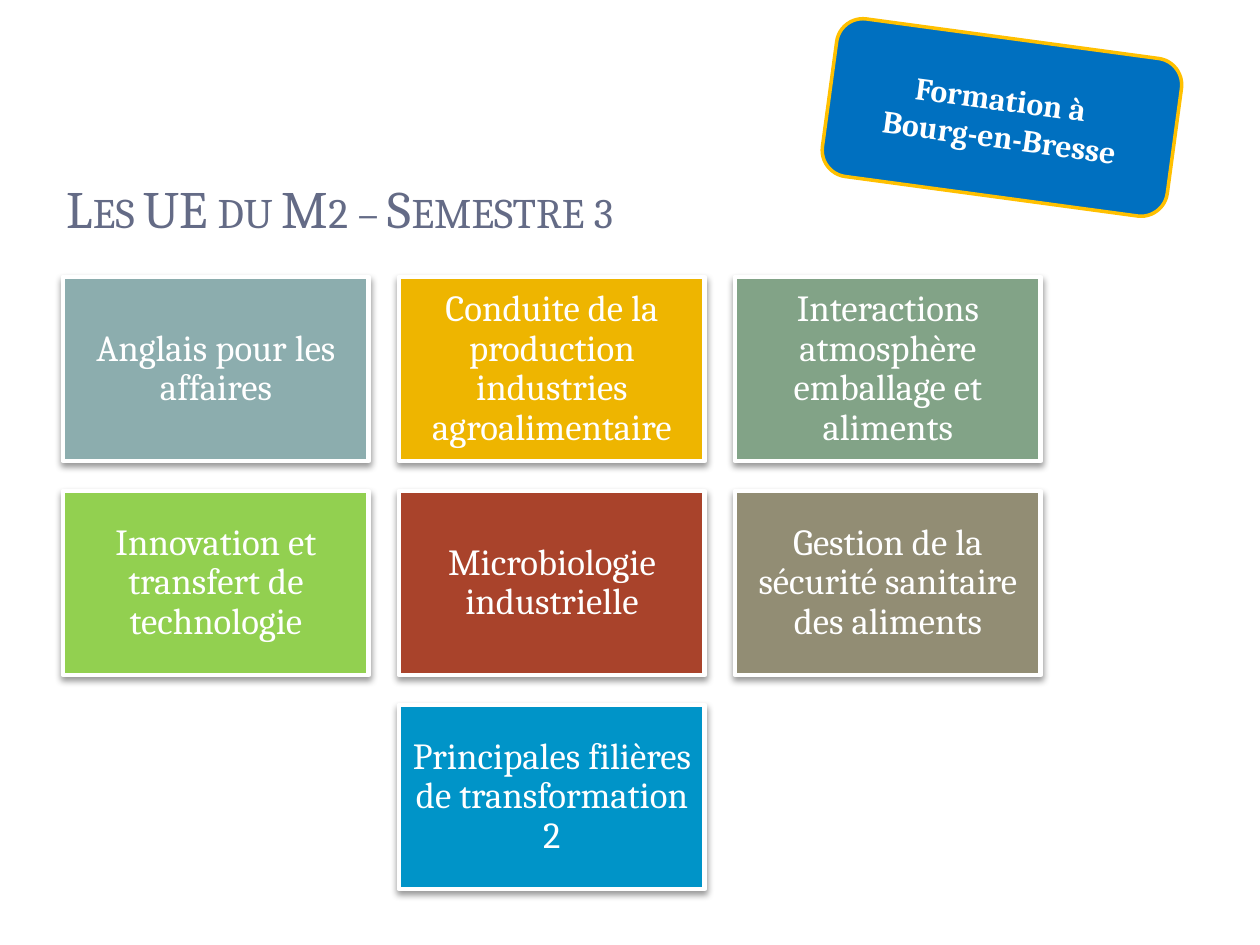
from lxml import etree
from pptx import Presentation
from pptx.dml.color import RGBColor
from pptx.enum.shapes import MSO_SHAPE
from pptx.enum.text import MSO_ANCHOR, PP_ALIGN
from pptx.oxml import parse_xml
from pptx.oxml.ns import nsdecls
from pptx.util import Pt

PX = 7257  # EMU per px, at 126 px to the inch
FONT = "Cambria"
RECTANGLE, ROUNDED = MSO_SHAPE.RECTANGLE, MSO_SHAPE.ROUNDED_RECTANGLE
CENTER, LEFT = PP_ALIGN.CENTER, PP_ALIGN.LEFT
MIDDLE, BOTTOM = MSO_ANCHOR.MIDDLE, MSO_ANCHOR.BOTTOM

WHITE = RGBColor(0xFF, 0xFF, 0xFF)
SLATE = RGBColor(0x64, 0x6B, 0x86)
TEAL = RGBColor(0x8C, 0xAD, 0xAE)
YELLOW = RGBColor(0xEE, 0xB5, 0x00)
SAGE = RGBColor(0x82, 0xA3, 0x87)
GREEN = RGBColor(0x92, 0xD0, 0x50)
BRICK = RGBColor(0xA9, 0x43, 0x2B)
TAUPE = RGBColor(0x92, 0x8D, 0x74)
SKY = RGBColor(0x00, 0x94, 0xC8)
BLUE = RGBColor(0x00, 0x70, 0xC0)
GOLD = RGBColor(0xFF, 0xC0, 0x00)

TITLE = "Les UE du M2 – Semestre 3"
CAMPUS = ["Formation à ", "Bourg-en-Bresse"]
COURSES = [
    ("Anglais pour les affaires", TEAL),
    ("Conduite de la production industries agroalimentaire", YELLOW),
    ("Interactions atmosphère emballage et aliments", SAGE),
    ("Innovation et transfert de technologie", GREEN),
    ("Microbiologie industrielle", BRICK),
    ("Gestion de la sécurité sanitaire des aliments", TAUPE),
    ("Principales filières de transformation 2", SKY),
]

COLUMNS = 3
GRID_LEFT, GRID_TOP = 63, 277
CARD_W, CARD_H = 306, 184
GAP_X, GAP_Y = 30, 30
CARD_INSET = 11


def px(*lengths):
    return [length * PX for length in lengths]


def write(frame, lines, size, color, align, anchor, bold=False):
    frame.word_wrap = True
    frame.vertical_anchor = anchor
    for i, line in enumerate(lines):
        paragraph = frame.paragraphs[0] if i == 0 else frame.add_paragraph()
        paragraph.alignment = align
        run = paragraph.add_run()
        run.text = line
        run.font.name = FONT
        run.font.size = Pt(size)
        run.font.bold = bold
        run.font.color.rgb = color


def add_panel(slide, kind, box, fill, line, line_width):
    panel = slide.shapes.add_shape(kind, *px(*box))
    panel.shadow.inherit = False
    panel.fill.solid()
    panel.fill.fore_color.rgb = fill
    panel.line.color.rgb = line
    panel.line.width = Pt(line_width)
    return panel


def add_drop_shadow(shape):
    effects = shape.element.spPr.find("{*}effectLst")
    etree.SubElement(effects, "placeholder")
    effects[0] = parse_xml(
        f'<a:outerShdw {nsdecls("a")} blurRad="50800" dist="25400" dir="5400000" rotWithShape="0">'
        '<a:srgbClr val="000000"><a:alpha val="40000"/></a:srgbClr></a:outerShdw>')


def add_title(slide):
    title = slide.shapes.title
    title.left, title.top, title.width, title.height = px(54, 87, 1029, 158)
    write(title.text_frame, [TITLE], 30, SLATE, LEFT, BOTTOM)
    title.text_frame.paragraphs[0].runs[0].font.element_cap = None
    run_properties = title.text_frame.paragraphs[0].runs[0].font._element
    run_properties.set("cap", "small")


def add_courses(slide):
    for i, (course, color) in enumerate(COURSES):
        row, column = divmod(i, COLUMNS)
        row_length = min(COLUMNS, len(COURSES) - row * COLUMNS)
        column += (COLUMNS - row_length) // 2  # a short last row is centred
        box = (GRID_LEFT + column * (CARD_W + GAP_X),
               GRID_TOP + row * (CARD_H + GAP_Y), CARD_W, CARD_H)
        card = add_panel(slide, RECTANGLE, box, color, WHITE, 2.75)
        add_drop_shadow(card)
        frame = card.text_frame
        frame.margin_left, frame.margin_top, frame.margin_right, frame.margin_bottom = px(
            *[CARD_INSET] * 4)
        write(frame, [course], 21, WHITE, CENTER, MIDDLE)
        frame.paragraphs[0].line_spacing = 0.9


def add_campus_badge(slide):
    badge = add_panel(slide, ROUNDED, (828, 38, 348, 159), BLUE, GOLD, 2)
    badge.rotation = 7.7
    write(badge.text_frame, CAMPUS, 18, WHITE, CENTER, MIDDLE, bold=True)


def main():
    deck = Presentation()
    deck.slide_width, deck.slide_height = px(1260, 945)
    slide = deck.slides.add_slide(deck.slide_layouts[5])
    add_title(slide)
    add_courses(slide)
    add_campus_badge(slide)
    deck.save("out.pptx")


if __name__ == "__main__":
    main()
